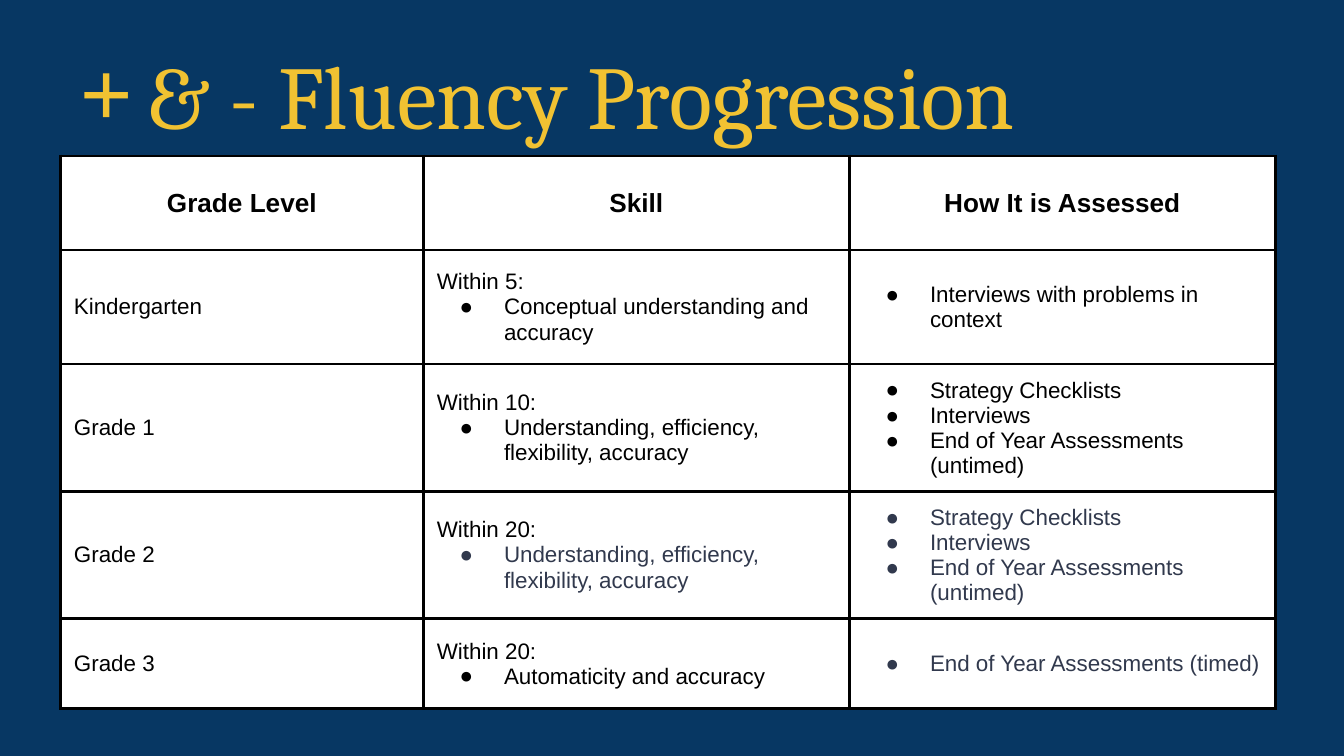
from dataclasses import dataclass

from lxml import etree
from pptx import Presentation, util as u
from pptx.dml.color import RGBColor
from pptx.enum import text as t
from pptx.oxml.ns import qn


@dataclass(frozen=True)
class Theme:
    back: str = "073763"
    gold: str = "F1C232"
    ink: str = "000000"
    slate: str = "31394D"
    paper: str = "FFFFFF"
    serif: str = "Cambria"
    sans: str = "Arial"
    title: int = 48
    head: int = 14
    body: int = 12
    line: float = 1.5
    inset: float = 0.1


@dataclass(frozen=True)
class Style:
    font: str
    size: int
    color: str
    bold: bool = False


@dataclass(frozen=True)
class Grade:
    name: str
    range: str
    skills: tuple[str, ...]
    checks: tuple[str, ...]
    skill_ink: str
    check_ink: str


THEME = Theme()
WIDTH = 10
HEIGHT = WIDTH * 9 / 16
HEADS = ("Grade Level", "Skill", "How It is Assessed")
COLS = (2.7, 3.17, 3.17)
ROWS = (0.7, 0.85, 0.93, 0.93, 0.67)
FLUENT = ("Understanding, efficiency, flexibility, accuracy",)
CHECKS = ("Strategy Checklists", "Interviews", "End of Year Assessments (untimed)")
GRADES = (
    Grade("Kindergarten", "Within 5:", ("Conceptual understanding and accuracy",),
          ("Interviews with problems in context",), THEME.ink, THEME.ink),
    Grade("Grade 1", "Within 10:", FLUENT, CHECKS, THEME.ink, THEME.ink),
    Grade("Grade 2", "Within 20:", FLUENT, CHECKS, THEME.slate, THEME.slate),
    Grade("Grade 3", "Within 20:", ("Automaticity and accuracy",),
          ("End of Year Assessments (timed)",), THEME.ink, THEME.slate),
)


def add_run(para, words: str, style: Style) -> None:
    run = para.add_run()
    run.text = words
    font = run.font
    font.name, font.size, font.bold = style.font, u.Pt(style.size), style.bold
    font.color.rgb = RGBColor.from_string(style.color)


def add_bullet(para, mark: str, hang: float, color: str) -> None:
    props = para._p.get_or_add_pPr()
    props.set("marL", str(u.Inches(0.5)))
    props.set("indent", str(-u.Inches(hang)))
    tint = etree.SubElement(props, qn("a:buClr"))
    etree.SubElement(tint, qn("a:srgbClr"), val=color)
    etree.SubElement(props, qn("a:buFont"), typeface=THEME.sans)
    etree.SubElement(props, qn("a:buChar"), char=mark)


def set_inset(box) -> None:
    """Give a cell or text frame equal margins and centre it vertically."""
    box.margin_left = box.margin_right = u.Inches(THEME.inset)
    box.margin_top = box.margin_bottom = u.Inches(THEME.inset)
    box.vertical_anchor = t.MSO_ANCHOR.MIDDLE


def format_cell(cell) -> None:
    set_inset(cell)
    props = cell._tc.get_or_add_tcPr()
    for side in ("lnL", "lnR", "lnT", "lnB"):
        line = etree.SubElement(props, qn(f"a:{side}"), w=str(u.Pt(THEME.line)))
        fill = etree.SubElement(line, qn("a:solidFill"))
        etree.SubElement(fill, qn("a:srgbClr"), val=THEME.ink)
    cell.fill.solid()
    cell.fill.fore_color.rgb = RGBColor.from_string(THEME.paper)


def fill_cell(cell, lead: str, style: Style, items: tuple[str, ...] = (),
              ink: str = THEME.ink, align=t.PP_ALIGN.LEFT) -> None:
    """Write an optional lead line, then the items as bullets."""
    format_cell(cell)
    frame = cell.text_frame
    dots = Style(style.font, style.size, ink)
    lines = [(lead, style, False)] if lead else []
    lines += [(item, dots, True) for item in items]
    for i, (words, look, dot) in enumerate(lines):
        para = frame.add_paragraph() if i else frame.paragraphs[0]
        para.alignment = align
        if dot:
            add_bullet(para, "●", 0.33, look.color)
        add_run(para, words, look)


def add_title(slide) -> None:
    title = slide.shapes.title
    title.left, title.top = u.Inches(0.5), u.Inches(0.23)
    title.width, title.height = u.Inches(9), u.Inches(0.94)
    frame = title.text_frame
    frame.word_wrap = True
    frame.auto_size = t.MSO_AUTO_SIZE.NONE
    set_inset(frame)
    para = frame.paragraphs[0]
    para.alignment = t.PP_ALIGN.LEFT
    add_bullet(para, "+", 0.58, THEME.gold)
    add_run(para, "& - Fluency Progression",
            Style(THEME.serif, THEME.title, THEME.gold))


def add_grid(slide) -> None:
    table = slide.shapes.add_table(
        len(ROWS), len(COLS), u.Inches(0.45), u.Inches(1.16),
        u.Inches(sum(COLS)), u.Inches(sum(ROWS))).table
    table.first_row = table.horz_banding = False
    for col, width in zip(table.columns, COLS):
        col.width = u.Inches(width)
    for row, height in zip(table.rows, ROWS):
        row.height = u.Inches(height)
    head = Style(THEME.sans, THEME.head, THEME.ink, True)
    body = Style(THEME.sans, THEME.body, THEME.ink)
    for i, words in enumerate(HEADS):
        fill_cell(table.cell(0, i), words, head, align=t.PP_ALIGN.CENTER)
    for i, grade in enumerate(GRADES, 1):
        fill_cell(table.cell(i, 0), grade.name, body)
        fill_cell(table.cell(i, 1), grade.range, body, grade.skills, grade.skill_ink)
        fill_cell(table.cell(i, 2), "", body, grade.checks, grade.check_ink)


def main() -> None:
    deck = Presentation()
    deck.slide_width, deck.slide_height = u.Inches(WIDTH), u.Inches(HEIGHT)
    slide = deck.slides.add_slide(deck.slide_layouts[5])
    fill = slide.background.fill
    fill.solid()
    fill.fore_color.rgb = RGBColor.from_string(THEME.back)
    add_title(slide)
    add_grid(slide)
    deck.save("out.pptx")


if __name__ == "__main__":
    main()
